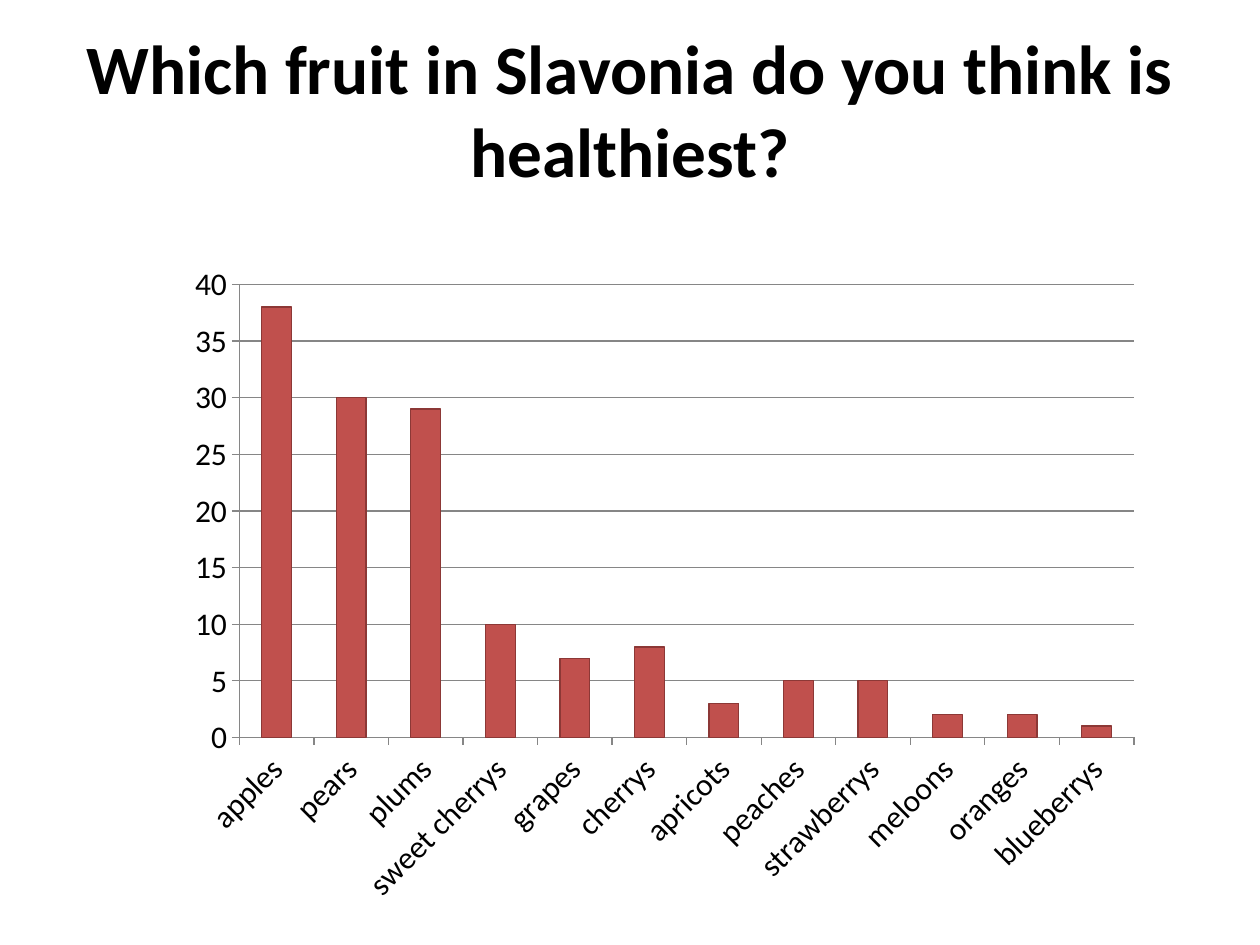
from dataclasses import dataclass

from lxml import etree
from pptx import Presentation
from pptx import util as u
from pptx.chart.data import CategoryChartData
from pptx.dml.color import RGBColor
from pptx.enum import chart as charts, text
from pptx.oxml.ns import qn

PX = u.Inches(1) / 126


@dataclass(frozen=True)
class Theme:
    font: str = "Calibri"
    ink: RGBColor = RGBColor(0, 0, 0)
    bar: RGBColor = RGBColor(0xC0, 0x50, 0x4D)
    bar_edge: RGBColor = RGBColor(0x8C, 0x38, 0x36)
    grid: RGBColor = RGBColor(0x86, 0x86, 0x86)
    title_size: float = 39.6
    chart_size: int = 18


VOTES = {
    "apples": 38, "pears": 30, "plums": 29, "sweet cherrys": 10,
    "grapes": 7, "cherrys": 8, "apricots": 3, "peaches": 5,
    "strawberrys": 5, "meloons": 2, "oranges": 2, "blueberrys": 1,
}


def px(*lengths):
    return [u.Emu(round(length * PX)) for length in lengths]


def place_plot(chart, **fractions):
    """Fix the inner plot area as fractions (x, y, w, h) of the chart."""
    plot_area = chart._chartSpace.chart.plotArea
    for old in plot_area.findall(qn("c:layout")):
        plot_area.remove(old)
    layout = etree.Element(qn("c:layout"))
    manual = etree.SubElement(layout, qn("c:manualLayout"))
    settings = {"layoutTarget": "inner", "xMode": "edge", "yMode": "edge", **fractions}
    for tag, value in settings.items():
        etree.SubElement(manual, qn(f"c:{tag}")).set("val", str(value))
    plot_area.insert(0, layout)


class SlideBuilder:
    def __init__(self, slide, theme):
        self.slide = slide
        self.theme = theme

    def set_font(self, font, size, bold=False):
        font.name = self.theme.font
        font.size = u.Pt(size)
        font.bold = bold
        font.color.rgb = self.theme.ink

    def title(self, wording, box):
        frame = self.slide.shapes.add_textbox(*px(*box)).text_frame
        frame.word_wrap = True
        frame.vertical_anchor = text.MSO_ANCHOR.MIDDLE
        heading = frame.paragraphs[0]
        heading.text = wording
        heading.alignment = text.PP_ALIGN.CENTER
        self.set_font(heading.font, self.theme.title_size, bold=True)

    def style_axis(self, axis):
        axis.major_tick_mark = charts.XL_TICK_MARK.OUTSIDE
        axis.minor_tick_mark = charts.XL_TICK_MARK.NONE
        axis.format.line.color.rgb = self.theme.grid
        axis.format.line.width = u.Pt(0.75)
        self.set_font(axis.tick_labels.font, self.theme.chart_size)

    def column_chart(self, name, values, box, plot):
        data = CategoryChartData()
        data.categories = list(values)
        data.add_series(name, list(values.values()))
        chart = self.slide.shapes.add_chart(
            charts.XL_CHART_TYPE.COLUMN_CLUSTERED, *px(*box), data).chart
        chart.has_legend = False
        chart.has_title = False
        self.set_font(chart.font, self.theme.chart_size)
        place_plot(chart, **plot)

        columns = chart.plots[0]
        columns.vary_by_categories = False
        columns.gap_width = 150
        bars = columns.series[0].format
        bars.fill.solid()
        bars.fill.fore_color.rgb = self.theme.bar
        bars.line.color.rgb = self.theme.bar_edge
        bars.line.width = u.Pt(0.75)

        for axis in (chart.category_axis, chart.value_axis):
            self.style_axis(axis)
        slanted = chart.category_axis._element.find(qn("c:txPr")).find(qn("a:bodyPr"))
        slanted.set("rot", str(-45 * 60000))
        scale = chart.value_axis
        scale.minimum_scale, scale.maximum_scale, scale.major_unit = 0, 40, 5
        scale.has_major_gridlines = True
        scale.major_gridlines.format.line.color.rgb = self.theme.grid
        scale.major_gridlines.format.line.width = u.Pt(0.75)


def main():
    deck = Presentation()
    deck.slide_width, deck.slide_height = px(1260, 945)
    builder = SlideBuilder(deck.slides.add_slide(deck.slide_layouts[6]), Theme())
    builder.title("Which fruit in Slavonia do you think is healthiest?",
                  (63, 29, 1134, 158))
    builder.column_chart("Series 1", VOTES, (0, 177, 1260, 768),
                         {"x": 0.19, "y": 0.14, "w": 0.71, "h": 0.59})
    deck.save("out.pptx")


if __name__ == "__main__":
    main()
